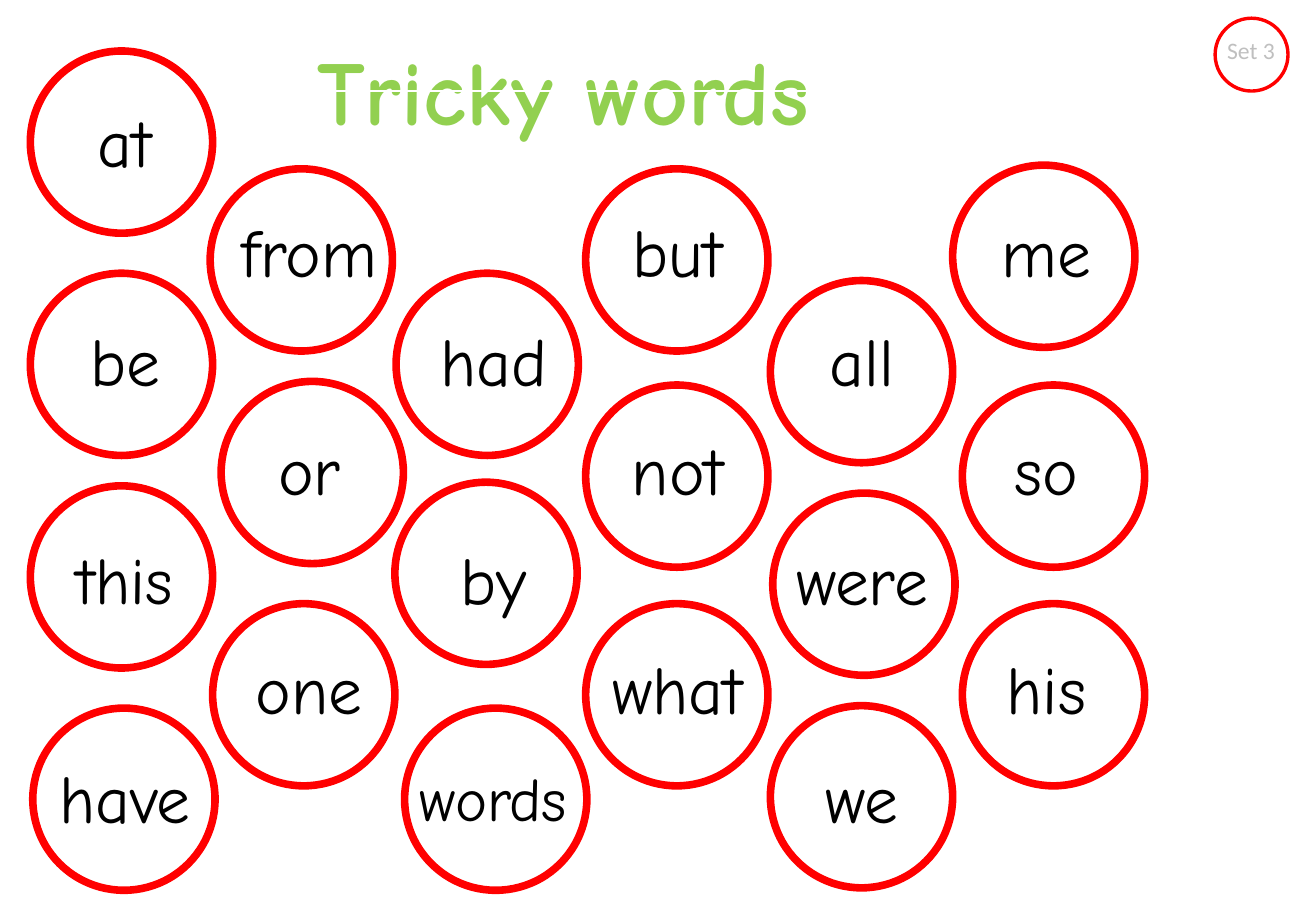
import pptx
import pptx.util
import pptx.dml.color
import pptx.enum.shapes
import pptx.enum.text
import pptx.oxml
from pptx.util import Inches

SHAPES = pptx.enum.shapes.MSO_SHAPE
ALIGN = pptx.enum.text.PP_ALIGN
ANCHOR = pptx.enum.text.MSO_ANCHOR
GROW = pptx.enum.text.MSO_AUTO_SIZE.SHAPE_TO_FIT_TEXT

# Each column: first table row, then (word, circle left, circle top) in every second row
WORD_COLUMNS = [
    (0, [("at", 0.25, 0.42), ("be", 0.25, 2.25), ("this", 0.25, 4), ("have", 0.27, 5.83)]),
    (1, [("from", 1.73, 1.39), ("or", 1.82, 3.14), ("one", 1.75, 4.97)]),
    (2, [("had", 3.26, 2.25), ("by", 3.25, 3.97), ("words", 3.33, 5.83)]),
    (1, [("but", 4.82, 1.39), ("not", 4.82, 3.17), ("what", 4.82, 4.97)]),
    (2, [("all", 6.34, 2.31), ("were", 6.36, 4.06), ("we", 6.34, 5.81)]),
    (1, [("me", 7.84, 1.36), ("so", 7.92, 3.17), ("his", 7.92, 4.97)]),
]
SMALLER_WORDS = {"this": 39, "words": 36}
ROW_COUNT = 7


def rgb(value):
    return pptx.dml.color.RGBColor.from_string(value)


def write(frame, text, font="Comic Neue", size=40, color="000000", bold=False,
          align=ALIGN.CENTER):
    paragraph = frame.paragraphs[0]
    paragraph.alignment = align
    run = paragraph.add_run()
    run.text = text
    run.font.name = font
    run.font.size = pptx.util.Pt(size)
    run.font.bold = bold
    run.font.color.rgb = rgb(color)
    return run


class WordMat:
    ring_color = "FF0000"
    title_color = "92D050"
    title_outline = "00B050"
    label_color = "BFBFBF"

    def __init__(self, deck):
        self.slide = deck.slides.add_slide(deck.slide_layouts[5])

    def title(self, text, left, top, width, height):
        heading = self.slide.shapes.title
        heading.left, heading.top = Inches(left), Inches(top)
        heading.width, heading.height = Inches(width), Inches(height)
        frame = heading.text_frame
        frame.word_wrap = False
        frame.auto_size = GROW
        frame.vertical_anchor = ANCHOR.TOP
        run = write(frame, text, size=54, color=self.title_color, bold=True)
        outline = pptx.oxml.parse_xml(
            '<a:ln xmlns:a="http://schemas.openxmlformats.org/drawingml/2006/main" w="9525">'
            f'<a:solidFill><a:srgbClr val="{self.title_outline}"/></a:solidFill></a:ln>')
        run.font.fill  # the outline goes before the fill
        run.font._element.insert(0, outline)

    def word_table(self, left, top, width, height):
        words = self.slide.shapes.add_table(
            ROW_COUNT, len(WORD_COLUMNS), Inches(left), Inches(top),
            Inches(width), Inches(height)).table
        words.first_row = False
        words.horz_banding = False
        for cell in words.iter_cells():
            cell.fill.background()
            cell.vertical_anchor = ANCHOR.MIDDLE
            cell.margin_left = cell.margin_right = 0
            cell.margin_top = cell.margin_bottom = 0
        for column, (first_row, entries) in enumerate(WORD_COLUMNS):
            for step, (word, *_) in enumerate(entries):
                cell = words.cell(first_row + 2 * step, column)
                write(cell.text_frame, word, size=SMALLER_WORDS.get(word, 40))

    def ring(self, left, top, diameter=1.5, weight=4.5):
        circle = self.slide.shapes.add_shape(
            SHAPES.OVAL, Inches(left), Inches(top), Inches(diameter), Inches(diameter))
        circle.shadow.inherit = False
        circle.fill.background()
        circle.line.color.rgb = rgb(self.ring_color)
        circle.line.width = pptx.util.Pt(weight)

    def label(self, text, left, top, width, height):
        tag = self.slide.shapes.add_shape(
            SHAPES.RECTANGLE, Inches(left), Inches(top), Inches(width), Inches(height))
        tag.shadow.inherit = False
        tag.fill.solid()
        tag.fill.fore_color.rgb = rgb("FFFFFF")
        tag.line.fill.background()
        frame = tag.text_frame
        frame.word_wrap = True
        frame.auto_size = GROW
        frame.vertical_anchor = ANCHOR.TOP
        write(frame, text, font="Calibri", size=14, color=self.label_color, align=ALIGN.LEFT)


def main():
    deck = pptx.Presentation()
    deck.slide_width, deck.slide_height = Inches(10.83), Inches(7.5)
    mat = WordMat(deck)

    # Words and the rings around them
    mat.word_table(0.27, 0.75, 9.1, 6.3)
    for _, entries in WORD_COLUMNS:
        for _, left, top in entries:
            mat.ring(left, top)

    # Heading
    mat.title("Tricky words", 2.16, 0.23, 4.95, 1.01)

    # Set number in the corner
    mat.label("Set 3", 10, 0.25, 0.83, 0.34)
    mat.ring(10, 0.15, diameter=0.6, weight=2)

    deck.save("out.pptx")


if __name__ == "__main__":
    main()
